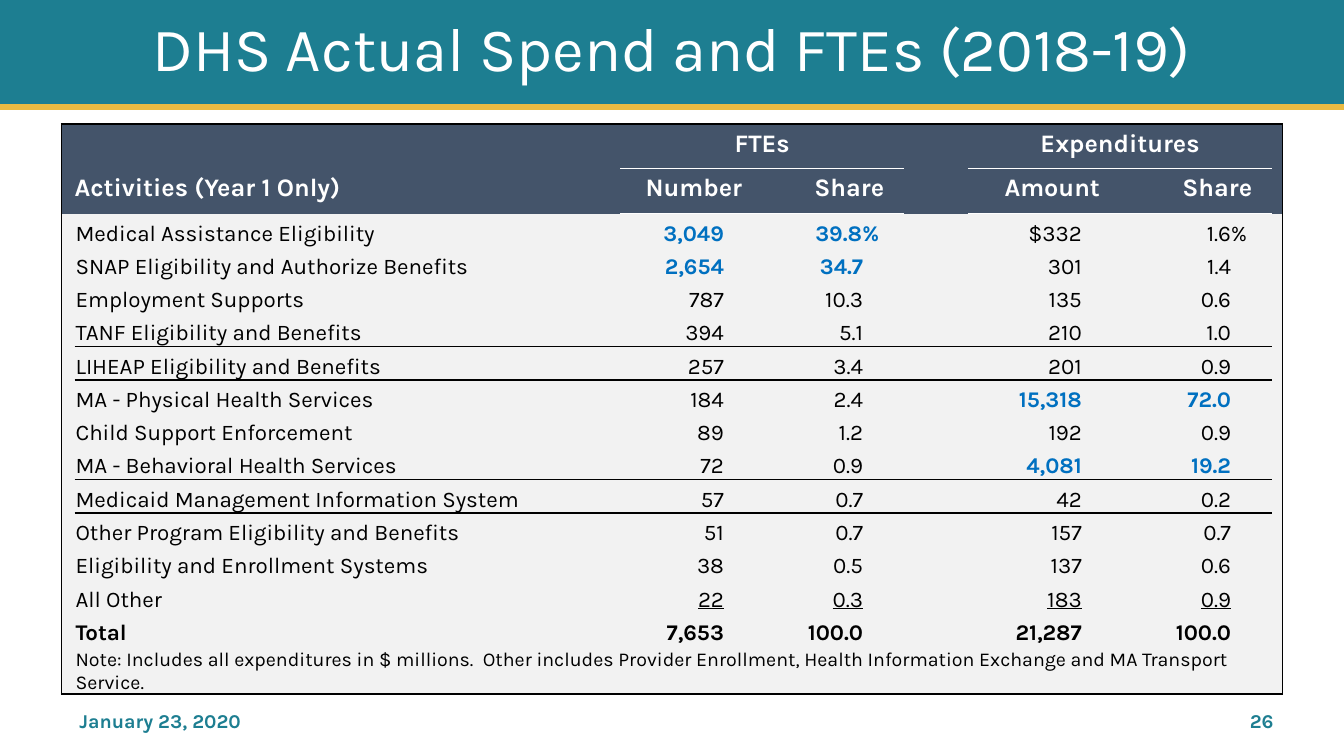
from lxml import etree
from pptx import Presentation
from pptx.dml.color import RGBColor
from pptx.enum.shapes import MSO_CONNECTOR, MSO_SHAPE
from pptx.enum.text import MSO_ANCHOR, PP_ALIGN
from pptx.oxml.ns import qn
from pptx.util import Inches, Pt

LEFT, CENTER, RIGHT = PP_ALIGN.LEFT, PP_ALIGN.CENTER, PP_ALIGN.RIGHT
TOP, MIDDLE, BOTTOM = MSO_ANCHOR.TOP, MSO_ANCHOR.MIDDLE, MSO_ANCHOR.BOTTOM
RECT, LINE = MSO_SHAPE.RECTANGLE, MSO_CONNECTOR.STRAIGHT

TEAL = RGBColor(0x1D, 0x7E, 0x91)
GOLD = RGBColor(0xEA, 0xBA, 0x42)
NAVY = RGBColor(0x44, 0x54, 0x6A)
GRAY = RGBColor(0xF2, 0xF2, 0xF2)
BLUE = RGBColor(0x00, 0x70, 0xC0)
BLACK = RGBColor(0, 0, 0)
WHITE = RGBColor(255, 255, 255)
PLAIN = "{2D5ABB26-0587-4C30-8999-92F81FD0307C}"  # table style without grid

COLS = [0.13, 5.41, 1.41, 1.41, 0.63, 1.51, 1.51, 0.1]
ROWS = [0.44, 0.45] + [0.33] * 13 + [0.36]
HEADS = ["Activities (Year 1 Only)", "Number", "Share", "Amount", "Share"]
SPOTS = [1, 2, 3, 5, 6]  # table columns that hold text
DATA = [
    ("Medical Assistance Eligibility", "3,049", "39.8%", "$332", "1.6%"),
    ("SNAP Eligibility and Authorize Benefits", "2,654", "34.7", "301", "1.4"),
    ("Employment Supports", "787", "10.3", "135", "0.6"),
    ("TANF Eligibility and Benefits", "394", "5.1", "210", "1.0"),
    ("LIHEAP Eligibility and Benefits", "257", "3.4", "201", "0.9"),
    ("MA - Physical Health Services", "184", "2.4", "15,318", "72.0"),
    ("Child Support Enforcement", "89", "1.2", "192", "0.9"),
    ("MA - Behavioral Health Services", "72", "0.9", "4,081", "19.2"),
    ("Medicaid Management Information System", "57", "0.7", "42", "0.2"),
    ("Other Program Eligibility and Benefits", "51", "0.7", "157", "0.7"),
    ("Eligibility and Enrollment Systems", "38", "0.5", "137", "0.6"),
    ("All Other", "22", "0.3", "183", "0.9"),
    ("Total", "7,653", "100.0", "21,287", "100.0"),
]
HOT = {"3,049", "39.8%", "2,654", "34.7", "15,318", "72.0", "4,081", "19.2"}
RULED = (5, 9)  # table rows with a rule below
NOTE = ("Note: Includes all expenditures in $ millions.  Other includes Provider "
        "Enrollment, Health Information Exchange and MA Transport Service.")


def write(frame, text, size=16, color=BLACK, bold=False, under=False,
          align=LEFT, space=None):
    para = frame.paragraphs[0]
    para.alignment = align
    para.line_spacing = space
    run = para.add_run()
    run.text = text
    font = run.font
    font.name, font.size, font.bold = "Karla", Pt(size), bold
    font.underline = under
    font.color.rgb = color


def edges(row, col):
    """Return the border colours of a cell by side, in schema order."""
    last = len(ROWS) - 1
    mid = 0 < col < len(COLS) - 1
    sides = {}
    if col == 0:
        sides["L"] = BLACK
    if col == len(COLS) - 1:
        sides["R"] = BLACK
    if row == 0 or mid and row - 1 in RULED:
        sides["T"] = BLACK
    elif row == 1 and col in SPOTS[1:]:
        sides["T"] = WHITE
    if row == last or mid and row in RULED:
        sides["B"] = BLACK
    elif row == 0 and col in SPOTS[1:]:
        sides["B"] = WHITE
    return sides


class Deck:
    def __init__(self):
        self.show = Presentation()
        self.show.slide_width = Inches(13.33)
        self.show.slide_height = Inches(7.5)
        self.slide = self.show.slides.add_slide(self.show.slide_layouts[6])
        self.shapes = self.slide.shapes

    def band(self, x, y, w, h, color):
        box = self.shapes.add_shape(RECT, Inches(x), Inches(y), Inches(w), Inches(h))
        box.shadow.inherit = False
        box.fill.solid()
        box.fill.fore_color.rgb = color
        box.line.fill.background()

    def rule(self, x, y, end, color, width):
        line = self.shapes.add_connector(LINE, Inches(x), Inches(y), Inches(end), Inches(y))
        line.line.color.rgb = color
        line.line.width = Pt(width)
        etree.SubElement(line._element.spPr, qn("a:effectLst"))

    def text(self, x, y, w, h, text, **form):
        box = self.shapes.add_textbox(Inches(x), Inches(y), Inches(w), Inches(h))
        frame = box.text_frame
        frame.word_wrap = True
        frame.vertical_anchor = MIDDLE
        write(frame, text, **form)

    def grid(self, x, y):
        """Add the table with its fills and borders, and return it."""
        frame = self.shapes.add_table(len(ROWS), len(COLS), Inches(x), Inches(y),
                                      Inches(sum(COLS)), Inches(sum(ROWS)))
        table = frame.table
        table.first_row = table.horz_banding = False
        table._tbl.tblPr.find(qn("a:tableStyleId")).text = PLAIN
        for col, width in enumerate(COLS):
            table.columns[col].width = Inches(width)
        for row, height in enumerate(ROWS):
            table.rows[row].height = Inches(height)
            for col in range(len(COLS)):
                cell = table.cell(row, col)
                self.inset(cell, 0, 0, 0, 0)
                for side, color in edges(row, col).items():
                    self.border(cell, side, color)
                cell.fill.solid()
                cell.fill.fore_color.rgb = NAVY if row < 2 else GRAY
        return table

    def border(self, cell, side, color):
        props = cell._tc.get_or_add_tcPr()
        line = etree.SubElement(props, qn("a:ln" + side), w=str(Pt(1)))
        fill = etree.SubElement(line, qn("a:solidFill"))
        etree.SubElement(fill, qn("a:srgbClr"), val=str(color))

    def inset(self, cell, left, top, right, bottom):
        cell.margin_left, cell.margin_top = Inches(left), Inches(top)
        cell.margin_right, cell.margin_bottom = Inches(right), Inches(bottom)

    def cell(self, cell, text, inset, anchor=BOTTOM, **form):
        self.inset(cell, *inset)
        cell.vertical_anchor = anchor
        write(cell.text_frame, text, **form)

    def fill(self, table):
        """Write the heads, the figures and the note."""
        head = dict(anchor=TOP, size=18, color=WHITE, bold=True)
        for col, text in ((2, "FTEs"), (5, "Expenditures")):
            table.cell(0, col).merge(table.cell(0, col + 1))
            self.cell(table.cell(0, col), text, (0.1, 0.05, 0.1, 0.05),
                      align=CENTER, **head)
        for col, text in zip(SPOTS, HEADS):
            first = col == 1
            inset = (0, 0.05, 0.1, 0.05) if first else (0.1, 0.05, 0.2, 0.05)
            self.cell(table.cell(1, col), text, inset,
                      align=LEFT if first else RIGHT, **head)

        for row, items in enumerate(DATA, 2):
            for col, text in zip(SPOTS, items):
                first, hot = col == 1, text in HOT
                if first:
                    right = 0.01
                elif col in (2, 5):
                    right = 0.38
                else:
                    right = 0.25 if text.endswith("%") else 0.41
                self.cell(table.cell(row, col), text, (0.01, 0.01, right, 0),
                          color=BLUE if hot else BLACK,
                          bold=hot or items[0] == "Total",
                          under=items[0] == "All Other" and not first,
                          align=LEFT if first else RIGHT)

        last = len(ROWS) - 1
        table.cell(last, 1).merge(table.cell(last, 6))
        self.cell(table.cell(last, 1), NOTE, (0.01, 0.01, 0.01, 0), size=14)


def main():
    deck = Deck()
    deck.band(0, -0.01, 13.33, 1.04, TEAL)
    deck.rule(0, 1.06, 13.33, GOLD, 4)
    deck.text(0.92, -0.11, 11.5, 1.25, "DHS Actual Spend and FTEs (2018-19)",
              size=44, color=WHITE, align=CENTER, space=0.9)
    foot = dict(size=14, color=TEAL, bold=True)
    deck.text(0.69, 6.95, 3, 0.4, "January 23, 2020", **foot)
    deck.text(9.73, 6.95, 3, 0.4, "26", align=RIGHT, **foot)
    deck.fill(deck.grid(0.61, 1.23))
    deck.show.save("out.pptx")


if __name__ == "__main__":
    main()
